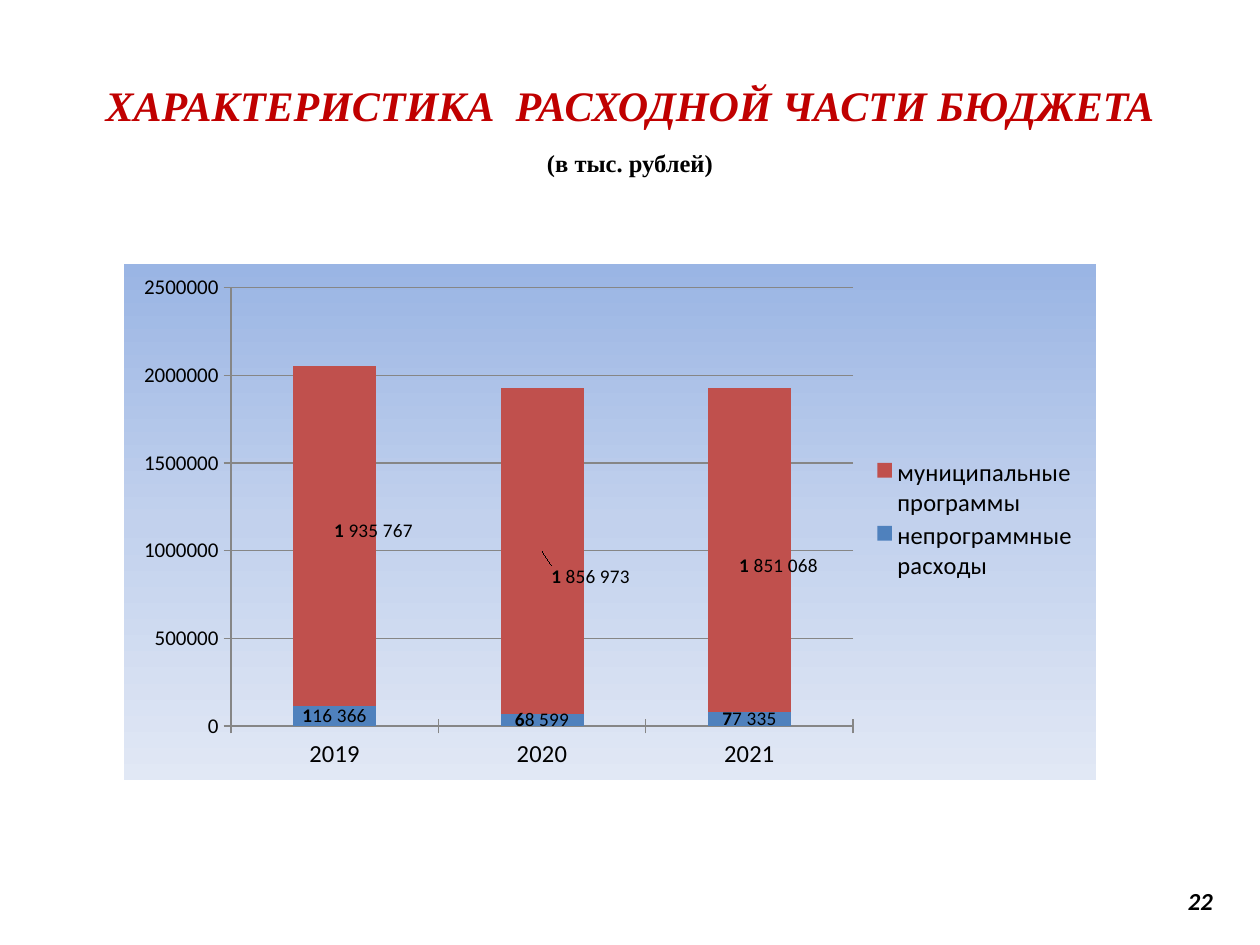
from dataclasses import dataclass

from lxml.etree import SubElement
from pptx import Presentation
from pptx.chart.data import CategoryChartData
from pptx.dml.color import RGBColor
from pptx.enum.chart import (XL_CHART_TYPE, XL_LABEL_POSITION,
                             XL_LEGEND_POSITION, XL_TICK_MARK)
from pptx.enum.text import MSO_ANCHOR, MSO_AUTO_SIZE, PP_ALIGN
from pptx.oxml import parse_xml
from pptx.oxml.ns import nsdecls, qn
from pptx.util import Cm, Pt


@dataclass(frozen=True)
class Theme:
    serif: str = "Times New Roman"
    sans: str = "Calibri"
    heading: str = "C00000"
    text: str = "000000"
    grid: str = "868686"
    gradient: tuple = ((0, "9AB5E4"), (50, "C2D1ED"), (100, "E1E8F5"))
    heading_size: int = 24
    body_size: int = 14
    axis_size: int = 12
    label_size: int = 11


THEME = Theme()
YEARS = ("2019", "2020", "2021")
# Series name, colour, values, label offsets as fractions of the chart
SERIES = (
    ("непрограммные расходы", "4F81BD", (116366, 68599, 77335),
     (None, None, None)),
    ("муниципальные программы", "C0504D", (1935767, 1856973, 1851068),
     ((0.04, -0.01), (0.05, 0.05), (0.03, 0.03))),
)


def style_font(font, size, color=THEME.text, name=THEME.sans,
               bold=False, italic=False):
    font.name, font.size = name, Pt(size)
    font.bold, font.italic = bold, italic
    font.color.rgb = RGBColor.from_string(color)


def add_run(p, text, size, **style):
    r = p.add_run()
    r.text = text
    style_font(r.font, size, **style)


def make_layout(**settings):
    """Return a manual chart layout with the given settings, in schema order."""
    layout = parse_xml(f"<c:layout {nsdecls('c')}/>")
    manual = SubElement(layout, qn("c:manualLayout"))
    for tag, value in settings.items():
        SubElement(manual, qn(f"c:{tag}")).set("val", str(value))
    return layout


def add_title(s):
    sp = s.shapes.title
    sp.left, sp.top, sp.width, sp.height = Cm(0), Cm(0.2), Cm(25.4), Cm(3.5)
    tf = sp.text_frame
    tf.word_wrap = True
    tf.auto_size = MSO_AUTO_SIZE.NONE
    tf.vertical_anchor = MSO_ANCHOR.BOTTOM
    p = tf.paragraphs[0]
    p.alignment = PP_ALIGN.CENTER
    add_run(p, "ХАРАКТЕРИСТИКА  РАСХОДНОЙ ЧАСТИ БЮДЖЕТА", THEME.heading_size,
            color=THEME.heading, name=THEME.serif, bold=True, italic=True)
    p = tf.add_paragraph()
    p.alignment = PP_ALIGN.CENTER
    p.space_before = Pt(10)
    add_run(p, "(в тыс. рублей)", THEME.body_size, name=THEME.serif, bold=True)


def add_page_number(s, number):
    sp = s.shapes.add_textbox(Cm(18.2), Cm(17.65), Cm(6.5), Cm(1.02))
    tf = sp.text_frame
    tf.word_wrap = True
    tf.vertical_anchor = MSO_ANCHOR.MIDDLE
    p = tf.paragraphs[0]
    p.alignment = PP_ALIGN.RIGHT
    add_run(p, str(number), THEME.body_size, bold=True, italic=True)


def fill_chart_area(chart):
    stops = "".join(
        f'<a:gs pos="{pos * 1000}"><a:srgbClr val="{color}"/></a:gs>'
        for pos, color in THEME.gradient)
    area = parse_xml(
        f"<c:spPr {nsdecls('c', 'a')}><a:gradFill><a:gsLst>{stops}</a:gsLst>"
        '<a:lin ang="5400000" scaled="0"/></a:gradFill>'
        "<a:ln><a:noFill/></a:ln></c:spPr>")
    chart._chartSpace.find(qn("c:chart")).addnext(area)


def style_axis(axis, size):
    axis.major_tick_mark = XL_TICK_MARK.CROSS
    style_font(axis.tick_labels.font, size)
    axis.format.line.color.rgb = RGBColor.from_string(THEME.grid)
    axis.format.line.width = Pt(0.75)


def label_point(point, value, offset):
    """Write the value with a bold first digit and shift the label."""
    label = point.data_label
    text = f"{value:,}".replace(",", " ")
    p = label.text_frame.paragraphs[0]
    add_run(p, text[0], THEME.label_size, bold=True)
    add_run(p, text[1:], THEME.label_size)
    label.position = XL_LABEL_POSITION.CENTER
    if offset:
        x, y = offset
        idx = label._dLbl.find(qn("c:idx"))
        idx.addnext(make_layout(x=x, y=y))


def add_budget_chart(s):
    data = CategoryChartData()
    data.categories = YEARS
    for name, _, values, _ in SERIES:
        data.add_series(name, values)
    chart = s.shapes.add_chart(XL_CHART_TYPE.COLUMN_STACKED, Cm(2.5), Cm(5.33),
                               Cm(19.6), Cm(10.4), data).chart
    chart.has_title = False
    style_font(chart.font, 18)
    fill_chart_area(chart)

    # Axes and grid
    style_axis(chart.category_axis, THEME.body_size)
    style_axis(chart.value_axis, THEME.axis_size)
    grid = chart.value_axis.major_gridlines.format.line
    grid.color.rgb = RGBColor.from_string(THEME.grid)
    grid.width = Pt(0.75)

    # Legend
    chart.has_legend = True
    legend = chart.legend
    legend.position = XL_LEGEND_POSITION.RIGHT
    legend.include_in_layout = False
    style_font(legend.font, THEME.body_size)
    legend._element.find(qn("c:legendPos")).addnext(make_layout(
        xMode="edge", yMode="edge", x=0.76, y=0.37, w=0.23, h=0.25))

    # Plot area
    plot_area = chart._chartSpace.chart.plotArea
    for old in plot_area.findall(qn("c:layout")):
        plot_area.remove(old)
    plot_area.insert(0, make_layout(layoutTarget="inner", xMode="edge",
                                    yMode="edge", x=0.11, y=0.045,
                                    w=0.64, h=0.85))

    # Columns and their labels
    plot = chart.plots[0]
    plot.gap_width, plot.overlap = 150, 100
    plot.vary_by_categories = False
    for series, (_, color, values, offsets) in zip(plot.series, SERIES):
        series.format.fill.solid()
        series.format.fill.fore_color.rgb = RGBColor.from_string(color)
        labels = series.data_labels
        labels.show_value = True
        labels.position = XL_LABEL_POSITION.CENTER
        style_font(labels.font, THEME.label_size, bold=True)
        for i, (value, offset) in enumerate(zip(values, offsets)):
            label_point(series.points[i], value, offset)


def main():
    prs = Presentation()
    prs.slide_width, prs.slide_height = Cm(25.4), Cm(19.05)
    s = prs.slides.add_slide(prs.slide_layouts[5])
    add_title(s)
    add_budget_chart(s)
    add_page_number(s, 22)
    prs.save("out.pptx")


if __name__ == "__main__":
    main()
